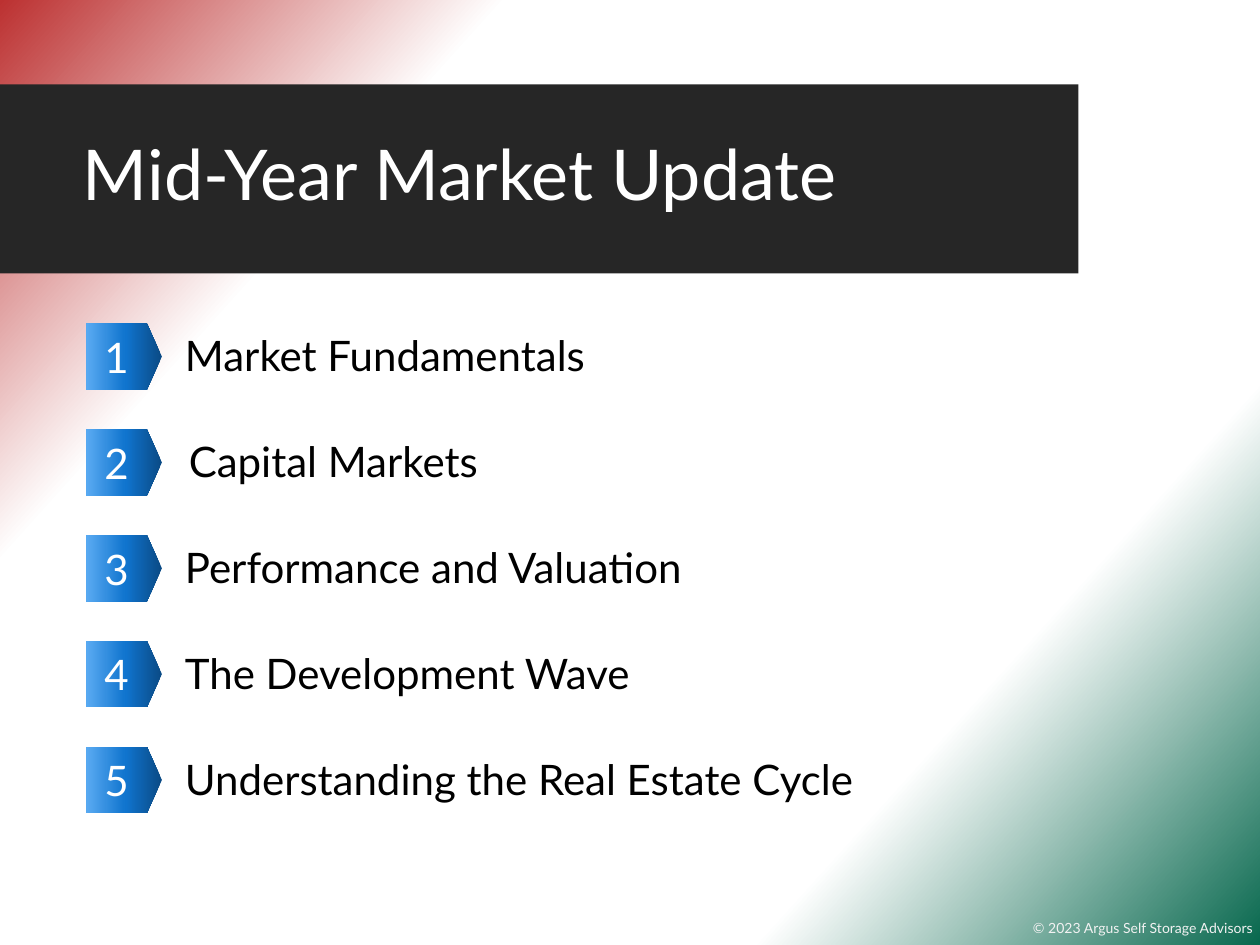
"""Build the agenda slide of a mid-year market update."""
from dataclasses import dataclass

from lxml.etree import SubElement
from pptx import Presentation
from pptx.dml.color import RGBColor
from pptx.enum.shapes import MSO_SHAPE as Preset
from pptx.enum.text import MSO_ANCHOR as Anchor, MSO_AUTO_SIZE as AutoSize, PP_ALIGN as Align
from pptx.oxml.ns import qn
from pptx.util import Inches, Pt

WIDTH, HEIGHT = 10, 7.5
FONT = "Lato"
FIRST_ROW, ROW_PITCH = 2.57, 0.84
BADGE_WIDTH, BADGE_HEIGHT, BADGE_LEFT, BADGE_RISE = 0.53, 0.6, 0.72, 0.04
COLOURS = {
    "red": "BC3131", "white": "FFFFFF", "green": "08684E", "banner": "262626",
    "credit": "F2F2F2", "text": "000000",
    "navy": "0A4A85", "blue": "1074CE", "sky": "59AAF2",
}
BACKGROUND_STOPS = ((0, "red"), (24, "white"), (76, "white"), (100, "green"))
BADGE_STOPS = ((0, "navy"), (48, "blue"), (100, "sky"))


@dataclass(frozen=True)
class Box:
    left: float
    top: float
    width: float
    height: float

    def emu(self) -> tuple:
        return tuple(Inches(n) for n in (self.left, self.top, self.width, self.height))


@dataclass(frozen=True)
class Topic:
    title: str
    left: float = 1.37
    width: float = 7


TOPICS = (
    Topic("Market Fundamentals", width=7.67),
    Topic("Capital Markets", left=1.4),
    Topic("Performance and Valuation"),
    Topic("The Development Wave"),
    Topic("Understanding the Real Estate Cycle"),
)


def colour(name: str) -> RGBColor:
    return RGBColor.from_string(COLOURS[name])


def set_gradient(fill, element, stops: tuple, angle: float) -> None:
    fill.gradient()
    fill.gradient_angle = angle
    stop_list = element.xpath(".//a:gradFill/a:gsLst")[0]
    for old_stop in list(stop_list):
        stop_list.remove(old_stop)
    for percent, name in stops:
        stop = SubElement(stop_list, qn("a:gs"), pos=str(percent * 1000))
        SubElement(stop, qn("a:srgbClr"), val=COLOURS[name])


def write(shape, text: str, size: float, name: str):
    paragraph = shape.text_frame.paragraphs[0]
    paragraph.text = text
    paragraph.font.name = FONT
    paragraph.font.size = Pt(size)
    paragraph.font.color.rgb = colour(name)
    return paragraph


def add_text(slide, box: Box, text: str, size: float, name: str):
    shape = slide.shapes.add_textbox(*box.emu())
    shape.text_frame.word_wrap = True
    shape.text_frame.auto_size = AutoSize.SHAPE_TO_FIT_TEXT
    write(shape, text, size, name)
    return shape


def add_shape(slide, preset: Preset, box: Box):
    shape = slide.shapes.add_shape(preset, *box.emu())
    shape.shadow.inherit = False
    shape.line.fill.background()
    return shape


def add_banner(slide, title: str) -> None:
    banner = add_shape(slide, Preset.RECTANGLE, Box(0, 0.67, 8.56, 1.5))
    banner.fill.solid()
    banner.fill.fore_color.rgb = colour("banner")
    heading = add_text(slide, Box(0.56, 0.82, 7.89, 1.18), title, 40, "white")
    heading.text_frame.auto_size = AutoSize.NONE
    heading.text_frame.vertical_anchor = Anchor.MIDDLE
    heading.text_frame.paragraphs[0].line_spacing = 0.9


def add_topic(slide, index: int, topic: Topic) -> None:
    top = FIRST_ROW + index * ROW_PITCH
    box = Box(BADGE_LEFT, top - BADGE_RISE, BADGE_WIDTH, BADGE_HEIGHT)
    badge = add_shape(slide, Preset.FLOWCHART_OFFPAGE_CONNECTOR, box)
    badge.rotation = 270
    set_gradient(badge.fill, badge.element, BADGE_STOPS, 90)
    badge.text_frame.vertical_anchor = Anchor.MIDDLE
    badge.element.txBody.bodyPr.set("vert", "vert")
    write(badge, str(index + 1), 24, "white").alignment = Align.CENTER
    add_text(slide, Box(topic.left, top, topic.width, 0.5), topic.title, 24, "text")


def main() -> None:
    presentation = Presentation()
    presentation.slide_width, presentation.slide_height = Inches(WIDTH), Inches(HEIGHT)
    slide = presentation.slides.add_slide(presentation.slide_layouts[6])
    set_gradient(slide.background.fill, slide.element, BACKGROUND_STOPS, 318)
    add_banner(slide, "Mid-Year Market Update")
    add_text(slide, Box(8.1, 7.25, 2, 0.24), "© 2023 Argus Self Storage Advisors", 8, "credit")
    for index, topic in enumerate(TOPICS):
        add_topic(slide, index, topic)
    presentation.save("out.pptx")


if __name__ == "__main__":
    main()
